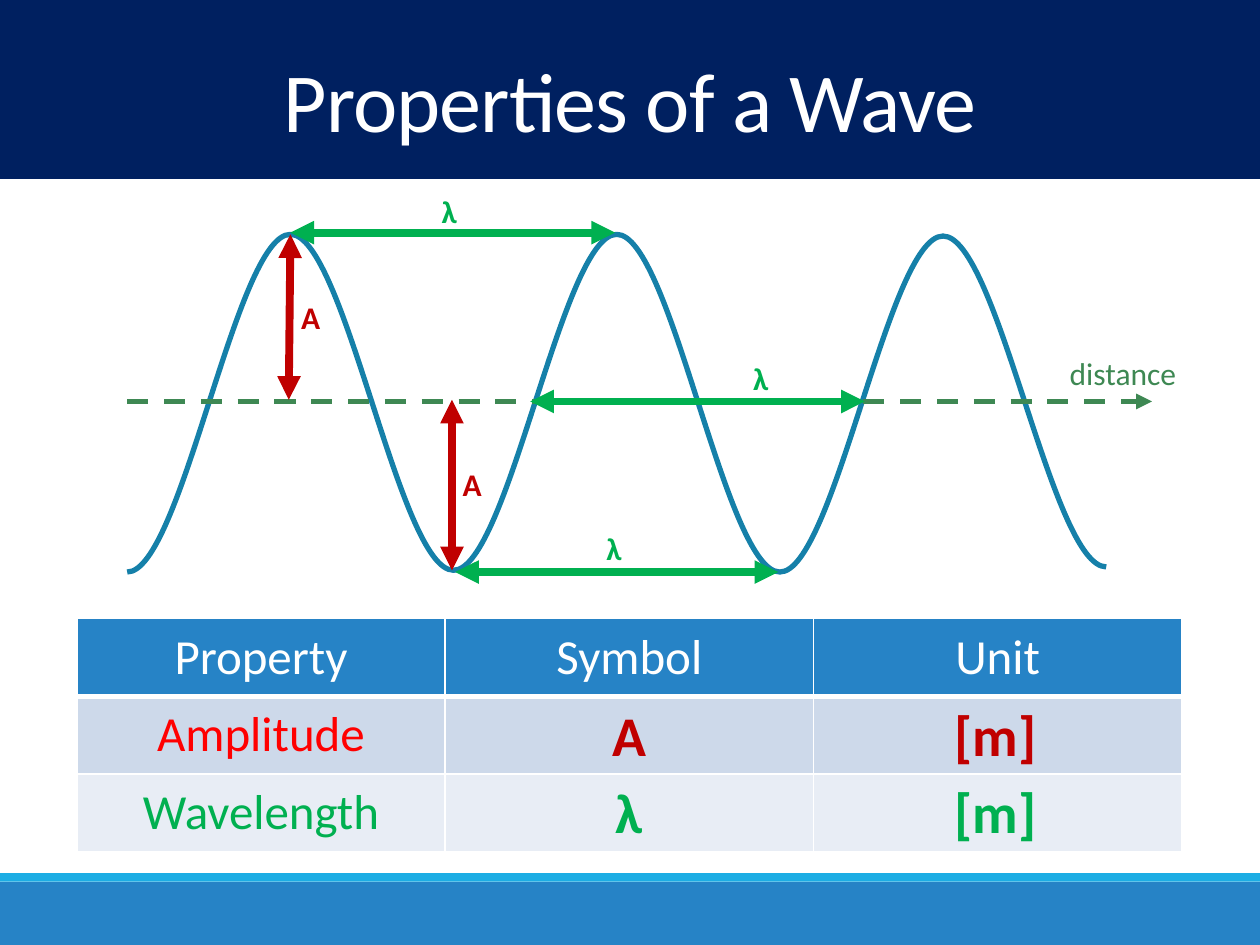
from dataclasses import dataclass

from lxml import etree
from pptx import Presentation
from pptx.dml.color import RGBColor
from pptx.enum.dml import MSO_LINE
from pptx.enum.shapes import MSO_CONNECTOR, MSO_SHAPE
from pptx.enum.text import MSO_ANCHOR, MSO_AUTO_SIZE, PP_ALIGN
from pptx.oxml.ns import qn
from pptx.util import Inches, Pt

STRAIGHT = MSO_CONNECTOR.STRAIGHT
RECTANGLE = MSO_SHAPE.RECTANGLE
DASH = MSO_LINE.DASH
MIDDLE = MSO_ANCHOR.MIDDLE
CENTER, LEFT = PP_ALIGN.CENTER, PP_ALIGN.LEFT
GROW = MSO_AUTO_SIZE.SHAPE_TO_FIT_TEXT
LABEL_HEIGHT = 0.4


@dataclass(frozen=True)
class Theme:
    font: str = "Calibri"
    white: str = "FFFFFF"
    banner: str = "002060"
    blue: str = "2683C6"
    stripe: str = "1CADE4"
    wave: str = "1580A9"
    axis: str = "3E8853"
    amplitude: str = "C00000"
    amplitude_name: str = "FF0000"
    wavelength: str = "00B050"
    bands: tuple = ("CDD9EA", "E8EDF5")
    title_size: int = 48
    symbol_size: int = 32
    table_size: int = 28
    label_size: int = 18
    thin: float = 3
    thick: float = 4.5


@dataclass(frozen=True)
class Grid:
    """A box in inches, divided into equal columns and rows."""
    left: float
    top: float
    width: float
    height: float
    columns: int = 1
    rows: int = 1

    def x(self, column):
        return Inches(self.left + column * self.width / self.columns)

    def y(self, row):
        return Inches(self.top + row * self.height / self.rows)

    def frame(self, column, row, columns, rows):
        x, y = self.x(column), self.y(row)
        return x, y, self.x(column + columns) - x, self.y(row + rows) - y


THEME = Theme()


def rgb(color):
    return RGBColor.from_string(color)


def add_span(para, text, size, color, bold=False):
    span = para.add_run()
    span.text = text
    font = span.font
    font.name, font.size, font.bold = THEME.font, Pt(size), bold
    font.color.rgb = rgb(color)
    return span


def add_text(page, frame, text, size, color, bold=False, align=LEFT, wrap=True):
    box = page.shapes.add_textbox(*frame)
    body = box.text_frame
    body.word_wrap = wrap
    body.auto_size = GROW
    para = body.paragraphs[0]
    para.alignment = align
    add_span(para, text, size, color, bold)
    return box


def add_bar(page, frame, color):
    bar = page.shapes.add_shape(RECTANGLE, *frame)
    bar.shadow.inherit = False
    bar.fill.solid()
    bar.fill.fore_color.rgb = rgb(color)
    bar.line.fill.background()


def add_arrow(shapes, grid, start, end, color, width, both_ends=True):
    arrow = shapes.add_connector(
        STRAIGHT, grid.x(start[0]), grid.y(start[1]), grid.x(end[0]), grid.y(end[1]))
    arrow.line.color.rgb = rgb(color)
    arrow.line.width = Pt(width)
    line = arrow.line._get_or_add_ln()
    for tag in ("a:headEnd", "a:tailEnd") if both_ends else ("a:tailEnd",):
        etree.SubElement(line, qn(tag), type="triangle")
    etree.SubElement(arrow._element.spPr, qn("a:effectLst"))
    return arrow


def add_banner(page, grid):
    add_bar(page, grid.frame(0, 0, 1, 1), THEME.banner)
    box = add_text(page, grid.frame(0, 0.3, 1, 0.59), "Properties of a Wave",
                   THEME.title_size, THEME.white, align=CENTER)
    box.text_frame.auto_size = MSO_AUTO_SIZE.NONE
    box.text_frame.vertical_anchor = MIDDLE
    para = box.text_frame.paragraphs[0]
    para.line_spacing = 0.85
    para.runs[0].font._element.set("spc", "-50")


def add_footer(page, grid):
    add_bar(page, grid.frame(0, 0.12, 1, 0.88), THEME.blue)
    add_bar(page, grid.frame(0, 0, 1, 0.12), THEME.stripe)


def round_off(curve):
    """Turn each straight segment into a curve that is level at both ends."""
    route = curve._element.spPr.find(".//" + qn("a:path"))
    points = [(int(point.get("x")), int(point.get("y")))
              for point in route.iter(qn("a:pt"))]
    segments = route.findall(qn("a:lnTo"))
    for segment, (x0, y0), (x1, y1) in zip(segments, points, points[1:]):
        bend = etree.Element(qn("a:cubicBezTo"))
        third = (x1 - x0) // 3
        for x, y in ((x0 + third, y0), (x1 - third, y1), (x1, y1)):
            etree.SubElement(bend, qn("a:pt"), x=str(x), y=str(y))
        route.replace(segment, bend)


def add_wave(page, grid):
    """One column is half a wavelength and one row is the amplitude."""
    group = page.shapes.add_group_shape()
    heights = (2, 0, 1.99, 0, 2, 0.01, 1.97)
    extremes = [(grid.x(column), grid.y(row)) for column, row in enumerate(heights)]
    builder = group.shapes.build_freeform(*extremes[0])
    builder.add_line_segments(extremes[1:], close=False)
    curve = builder.convert_to_shape()
    round_off(curve)
    curve.shadow.inherit = False
    curve.fill.background()
    curve.line.color.rgb = rgb(THEME.wave)
    curve.line.width = Pt(THEME.thin)
    axis = add_arrow(group.shapes, grid, (0, 0.99), (6.28, 0.99),
                     THEME.axis, THEME.thin, both_ends=False)
    axis.line.dash_style = DASH

    measures = (
        ("A", THEME.amplitude, (1, 0), (0.99, 0.98), (0.99, 0.34)),
        ("A", THEME.amplitude, (1.99, 0.98), (1.99, 1.99), (1.98, 1.33)),
        ("λ", THEME.wavelength, (1, -0.01), (2.99, -0.01), (1.85, -0.29)),
        ("λ", THEME.wavelength, (2.47, 0.99), (4.52, 0.99), (3.76, 0.7)),
        ("λ", THEME.wavelength, (2.01, 2), (3.99, 2), (2.86, 1.71)),
    )
    label_rows = LABEL_HEIGHT * grid.rows / grid.height
    for symbol, color, start, end, corner in measures:
        add_arrow(page.shapes, grid, start, end, color, THEME.thick)
        add_text(page, grid.frame(*corner, 0.3, label_rows), symbol,
                 THEME.label_size, color, bold=True)
    add_text(page, grid.frame(5.7, 0.67, 1.2, label_rows), "distance",
             THEME.label_size, THEME.axis)


def set_borders(cell, top, bottom):
    properties = cell._tc.get_or_add_tcPr()
    sides = (("L", 1), ("R", 1), ("T", top), ("B", bottom))
    for place, (side, width) in enumerate(sides):
        line = etree.Element(qn("a:ln" + side), w=str(Pt(width)))
        fill = etree.SubElement(line, qn("a:solidFill"))
        etree.SubElement(fill, qn("a:srgbClr"), val=THEME.white)
        properties.insert(place, line)


def add_property_table(page, grid):
    rows = (
        (THEME.blue, THEME.white, ("Property", "Symbol", "Unit")),
        (THEME.bands[0], THEME.amplitude_name, ("Amplitude", "", "")),
        (THEME.bands[1], THEME.wavelength, ("Wavelength", "", "")),
    )
    frame = grid.frame(0, 0, grid.columns, grid.rows)
    table = page.shapes.add_table(grid.rows, grid.columns, *frame).table
    for r, (fill, color, texts) in enumerate(rows):
        for c, text in enumerate(texts):
            cell = table.cell(r, c)
            cell.fill.solid()
            cell.fill.fore_color.rgb = rgb(fill)
            cell.vertical_anchor = MIDDLE
            set_borders(cell, 3 if r == 1 else 1, 3 if r == 0 else 1)
            if text:
                para = cell.text_frame.paragraphs[0]
                para.alignment = CENTER
                add_span(para, text, THEME.table_size, color)

    symbols = ((1, 1, "A", 0.18, THEME.amplitude), (2, 1, "[m]", 0.32, THEME.amplitude),
               (1, 2, "λ", 0.16, THEME.wavelength), (2, 2, "[m]", 0.32, THEME.wavelength))
    for column, row, text, width, color in symbols:
        frame = grid.frame(column + 0.51 - width / 2, row - 0.03, width, 1.04)
        add_text(page, frame, text, THEME.symbol_size, color, bold=True, wrap=False)


def main():
    deck = Presentation()
    deck.slide_width, deck.slide_height = Inches(10), Inches(7.5)
    page = deck.slides.add_slide(deck.slide_layouts[6])
    add_footer(page, Grid(0, 6.93, 10, 0.57))
    add_banner(page, Grid(0, 0, 10, 1.42))
    add_property_table(page, Grid(0.61, 4.91, 8.77, 1.85, columns=3, rows=3))
    add_wave(page, Grid(1.01, 1.86, 7.77, 2.68, columns=6, rows=2))
    deck.save("out.pptx")


if __name__ == "__main__":
    main()
